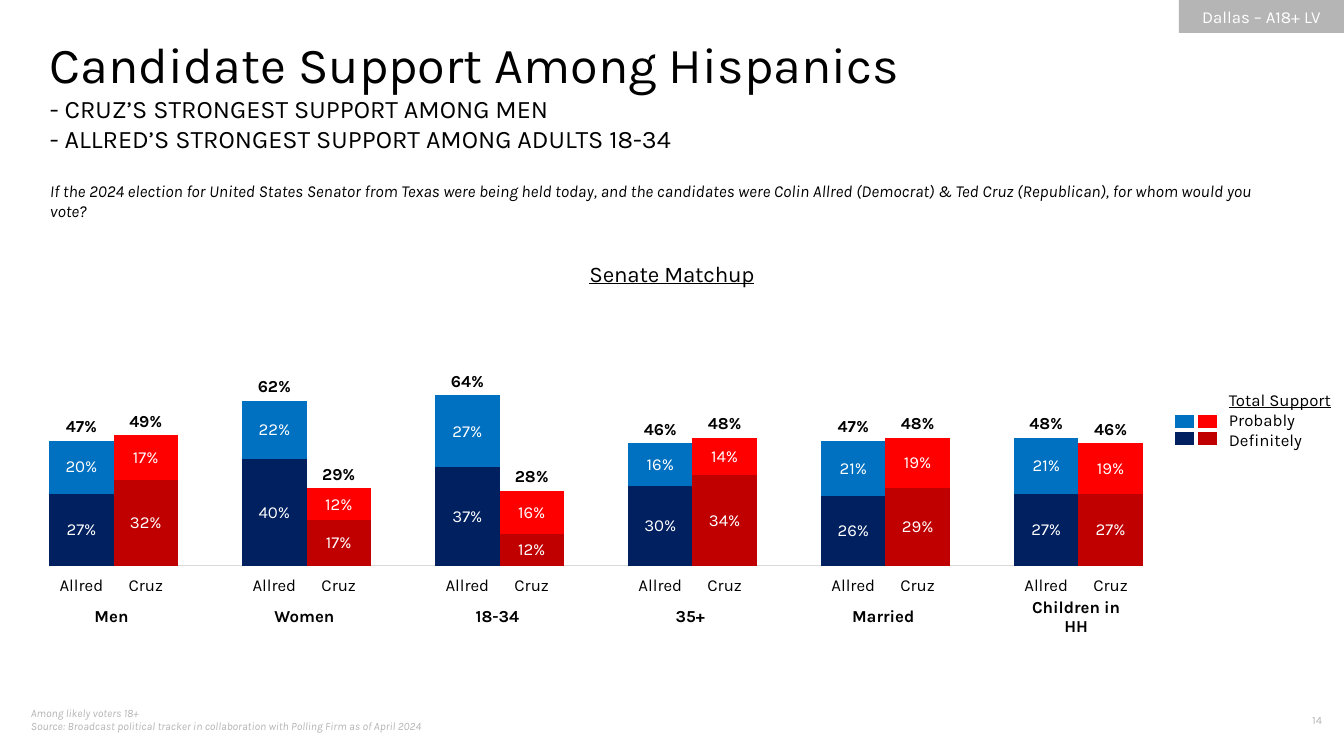
from lxml.etree import SubElement
from pptx import Presentation
from pptx.chart.data import CategoryChartData
from pptx.dml.color import RGBColor
from pptx.enum.chart import XL_CHART_TYPE, XL_LABEL_POSITION, XL_TICK_LABEL_POSITION, XL_TICK_MARK
from pptx.enum.shapes import MSO_SHAPE
from pptx.enum.text import MSO_ANCHOR, PP_ALIGN
from pptx.oxml import parse_xml
from pptx.oxml.ns import nsdecls, qn
from pptx.util import Emu, Pt

EMU_PER_PX = 914400 / 100.8
FONT = "Karla"
BLACK, WHITE, GREY, AXIS_GREY = "000000", "FFFFFF", "B5B5B5", "D9D9D9"
DEFINITELY = ("002060", "C00000")
PROBABLY = ("0070C0", "FF0000")
CANDIDATES = ("Allred", "Cruz")

# Group: (definitely, probably, total), each as (Allred, Cruz) in percent
SUPPORT = {
    "Men": ((27, 32), (20, 17), (47, 49)),
    "Women": ((40, 17), (22, 12), (62, 29)),
    "18-34": ((37, 12), (27, 16), (64, 28)),
    "35+": ((30, 34), (16, 14), (46, 48)),
    "Married": ((26, 29), (21, 19), (47, 48)),
    "Children in HH": ((27, 27), (21, 19), (48, 46)),
}


def px(length):
    return Emu(round(length * EMU_PER_PX))


def color(hex_string):
    return RGBColor.from_string(hex_string)


def set_font(font, size, hex_string=BLACK, bold=False, italic=False, underline=False):
    font.name = FONT
    font.size = Pt(size)
    font.color.rgb = color(hex_string)
    font.bold, font.italic, font.underline = bold, italic, underline


def write(text_frame, text, size, hex_string=BLACK, align=PP_ALIGN.LEFT, **style):
    text_frame.text = text
    for paragraph in text_frame.paragraphs:
        paragraph.alignment = align
        for run in paragraph.runs:
            set_font(run.font, size, hex_string, **style)


def add_text(slide, box, text, size, hex_string=BLACK, inset=True, **style):
    text_frame = slide.shapes.add_textbox(*map(px, box)).text_frame
    text_frame.word_wrap = True
    if not inset:
        text_frame.margin_left = text_frame.margin_right = 0
        text_frame.margin_top = text_frame.margin_bottom = 0
    write(text_frame, text, size, hex_string, **style)
    return text_frame


def add_plain_table(slide, box, row_count, column_widths):
    table = slide.shapes.add_table(row_count, len(column_widths), *map(px, box)).table
    table.first_row = table.horz_banding = False
    for column, width in zip(table.columns, column_widths):
        column.width = px(width)
    for cell in table.iter_cells():
        cell.fill.background()
    return table


def add_region_tag(slide, box):
    tag = slide.shapes.add_shape(MSO_SHAPE.RECTANGLE, *map(px, box))
    tag.shadow.inherit = False
    tag.fill.solid()
    tag.fill.fore_color.rgb = color(GREY)
    tag.line.fill.background()
    tag.text_frame.vertical_anchor = MSO_ANCHOR.MIDDLE
    write(tag.text_frame, "Dallas – A18+ LV", 12, WHITE, PP_ALIGN.CENTER)


def add_heading(slide, box):
    left, top, width, height = box
    heading = add_text(
        slide, (left, top, width, 122),
        "Candidate Support Among Hispanics\n"
        "- CRUZ’S STRONGEST SUPPORT AMONG MEN\n"
        "- ALLRED’S STRONGEST SUPPORT AMONG ADULTS 18-34", 18, inset=False)
    heading.paragraphs[0].runs[0].font.size = Pt(36)
    add_text(
        slide, (left, top + 148, width, height - 148),
        "If the 2024 election for United States Senator from Texas were being held today, "
        "and the candidates were Colin Allred (Democrat) & Ted Cruz (Republican), "
        "for whom would you vote?", 12, inset=False, italic=True)


def add_legend(slide, box):
    left, top, width, height = box
    # Colour swatches with white borders
    swatches = add_plain_table(slide, (left, top + 35, 46, 34), 2, (23, 23))
    for row, fills in zip(swatches.rows, (PROBABLY, DEFINITELY)):
        row.height = px(17)
        for cell, fill in zip(row.cells, fills):
            cell.margin_left = cell.margin_right = cell.margin_top = cell.margin_bottom = 0
            end_properties = SubElement(cell.text_frame.paragraphs[0]._p, qn("a:endParaRPr"))
            end_properties.set("sz", "600")
            cell.fill.solid()
            cell.fill.fore_color.rgb = color(fill)
            for index, side in enumerate(("lnL", "lnR", "lnT", "lnB")):
                border = parse_xml(
                    f'<a:{side} {nsdecls("a")} w="{Pt(3)}"><a:solidFill>'
                    f'<a:srgbClr val="{WHITE}"/></a:solidFill></a:{side}>')
                cell._tc.get_or_add_tcPr().insert(index, border)
    # Names
    names = add_text(slide, (left + 46, top, width - 46, height),
                     "Total Support\nProbably\nDefinitely", 12)
    names.vertical_anchor = MSO_ANCHOR.MIDDLE
    names.paragraphs[0].runs[0].font.underline = True


def support_chart_data():
    data = CategoryChartData(number_format="0%")
    categories, levels = [], ([], [], [])
    for group in SUPPORT.values():
        if categories:
            categories.append("   ")
            for values in levels:
                values.append(None)
        categories.extend(CANDIDATES)
        for values, shares in zip(levels, group):
            values.extend(share / 100 for share in shares)
    data.categories = categories
    for name, values in zip(("Definitely", "Probably", "Total Support"), levels):
        data.add_series(name, values)
    return data


def set_layout(parent, position, **fractions):
    for old in parent.findall(qn("c:layout")):
        parent.remove(old)
    target = '<c:layoutTarget val="inner"/>' if "w" in fractions else ""
    modes = "".join(f'<c:{key}Mode val="edge"/>' for key in ("x", "y"))
    sizes = "".join(f'<c:{key} val="{value}"/>' for key, value in fractions.items())
    parent.insert(position, parse_xml(
        f'<c:layout {nsdecls("c")}><c:manualLayout>{target}{modes}{sizes}'
        '</c:manualLayout></c:layout>'))


def add_support_chart(slide, box):
    chart = slide.shapes.add_chart(
        XL_CHART_TYPE.COLUMN_STACKED, *map(px, box), support_chart_data()).chart
    chart.has_legend = False
    set_font(chart.font, 10)
    write(chart.chart_title.text_frame, "Senate Matchup", 16,
          align=PP_ALIGN.CENTER, underline=True)
    chart.chart_title.include_in_layout = False
    set_layout(chart._chartSpace.chart.plotArea, 0, x=0.012, y=0.157, w=0.857, h=0.737)

    # Axes
    value_axis = chart.value_axis
    value_axis.minimum_scale, value_axis.maximum_scale = 0, 1
    value_axis.has_major_gridlines = False
    value_axis.visible = False
    category_axis = chart.category_axis
    category_axis.major_tick_mark = XL_TICK_MARK.NONE
    category_axis.tick_label_position = XL_TICK_LABEL_POSITION.LOW
    category_axis.format.line.color.rgb = color(AXIS_GREY)
    category_axis.format.line.width = Pt(0.75)
    set_font(category_axis.tick_labels.font, 12)

    # Bars and their labels
    plot = chart.plots[0]
    plot.gap_width, plot.overlap = 0, 100
    plot.vary_by_categories = False
    for series, fills in zip(plot.series, (DEFINITELY, PROBABLY, None)):
        labels = series.data_labels
        labels.show_value = True
        labels.number_format, labels.number_format_is_linked = "0%", False
        if fills is None:
            series.format.fill.background()
            labels.position = XL_LABEL_POSITION.INSIDE_BASE
            set_font(labels.font, 12, bold=True)
            continue
        labels.position = XL_LABEL_POSITION.CENTER
        set_font(labels.font, 12, WHITE)
        for index, value in enumerate(series.values):
            if value is not None:
                fill = series.points[index].format.fill
                fill.solid()
                fill.fore_color.rgb = color(fills[index % 3])


def add_group_names(slide, box):
    widths = [64 if index % 2 else 129 for index in range(2 * len(SUPPORT) - 1)]
    table = add_plain_table(slide, box, 1, widths)
    for index, group in enumerate(SUPPORT):
        cell = table.cell(0, 2 * index)
        cell.vertical_anchor = MSO_ANCHOR.MIDDLE
        write(cell.text_frame, group, 12, align=PP_ALIGN.CENTER, bold=True)


def add_footer(slide, box):
    left, top, width, height = box
    add_text(slide, (left, top, 515, height),
             "Among likely voters 18+\nSource: Broadcast political tracker in collaboration "
             "with Polling Firm as of April 2024", 8, GREY, italic=True)
    add_text(slide, (left + width - 89, top + 7, 89, 27), "14", 8, GREY, align=PP_ALIGN.RIGHT)


def main():
    presentation = Presentation()
    presentation.slide_width, presentation.slide_height = px(1344), px(756)
    slide = presentation.slides.add_slide(presentation.slide_layouts[6])
    add_region_tag(slide, (1179, 0, 165, 33))
    add_footer(slide, (21, 701, 1311, 40))
    add_legend(slide, (1173, 378, 172, 84))
    add_heading(slide, (50, 33, 1210, 188))
    add_support_chart(slide, (34, 243, 1276, 361))
    add_group_names(slide, (47, 592, 1094, 41))
    presentation.save("out.pptx")


if __name__ == "__main__":
    main()
